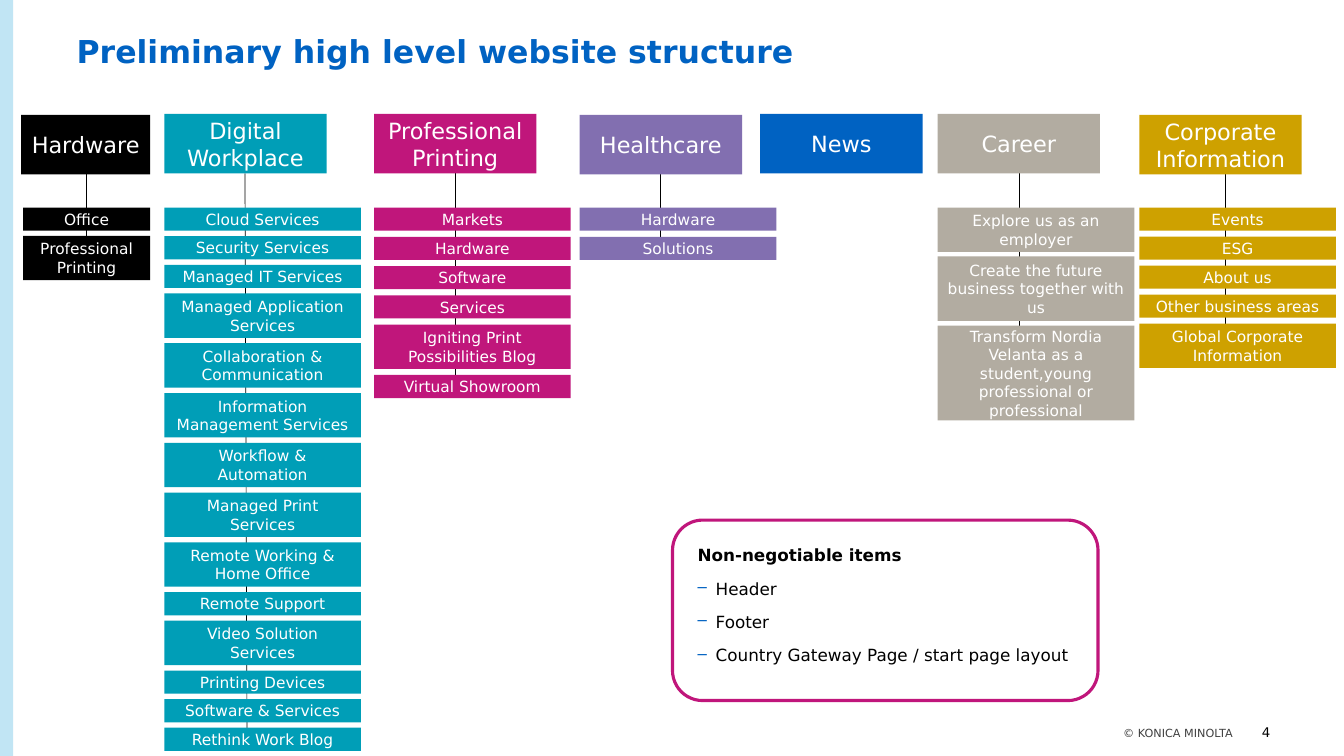
from pptx import Presentation
from pptx.dml.color import RGBColor
from pptx.enum.shapes import MSO_CONNECTOR, MSO_SHAPE
from pptx.enum.text import MSO_ANCHOR, PP_ALIGN
from pptx.oxml.ns import qn
from pptx.util import Pt
from lxml import etree

PX = 9144  # EMU per px, 100 px to the inch
FONT = "DejaVu Sans"

BLACK = RGBColor(0x00, 0x00, 0x00)
WHITE = RGBColor(0xFF, 0xFF, 0xFF)
GREY = RGBColor(0x40, 0x40, 0x40)
PALE_BLUE = RGBColor(0xC1, 0xE5, 0xF4)
BLUE = RGBColor(0x00, 0x62, 0xC2)
TEAL = RGBColor(0x00, 0x9E, 0xB7)
PINK = RGBColor(0xC0, 0x16, 0x7B)
PURPLE = RGBColor(0x82, 0x6F, 0xB0)
STONE = RGBColor(0xB2, 0xAC, 0xA1)
GOLD = RGBColor(0xCE, 0xA1, 0x00)

LEFT, CENTER, RIGHT = PP_ALIGN.LEFT, PP_ALIGN.CENTER, PP_ALIGN.RIGHT
TOP, MIDDLE, BOTTOM = MSO_ANCHOR.TOP, MSO_ANCHOR.MIDDLE, MSO_ANCHOR.BOTTOM
RECT, ROUND_RECT = MSO_SHAPE.RECTANGLE, MSO_SHAPE.ROUNDED_RECTANGLE
STRAIGHT = MSO_CONNECTOR.STRAIGHT

HEAD_HEIGHT = 59
LIST_TOP = 206
ITEM_HEIGHT = {1: 23, 2: 44, 3: 64, 5: 94}  # by number of text lines

# name, colour, head (left, top, width), list (left, width, bottom),
# stem (x at top, x at bottom, end y), items as (text, lines)
COLUMNS = [
    ("Hardware", BLACK, (21, 114, 128), (23, 126, 278), (86, 86, 250), [
        ("Office", 1), ("Professional Printing", 2)]),
    ("Digital Workplace", TEAL, (163, 113, 161), (163, 195, 745), (243, 245, 734), [
        ("Cloud Services", 1), ("Security Services", 1),
        ("Managed IT Services", 1), ("Managed Application Services", 2),
        ("Collaboration & Communication", 2),
        ("Information Management Services", 2),
        ("Workflow & Automation", 2), ("Managed Print Services", 2),
        ("Remote Working & Home Office", 2), ("Remote Support", 1),
        ("Video Solution Services", 2), ("Printing Devices", 1),
        ("Software & Services", 1), ("Rethink Work Blog", 1)]),
    ("Professional Printing", PINK, (371, 113, 161), (371, 195, 395), (452, 452, 384), [
        ("Markets", 1), ("Hardware", 1), ("Software", 1), ("Services", 1),
        ("Igniting Print Possibilities Blog", 2), ("Virtual Showroom", 1)]),
    ("Healthcare", PURPLE, (575, 114, 161), (575, 195, 258), (655, 655, 244), [
        ("Hardware", 1), ("Solutions", 1)]),
    ("News", BLUE, (754, 113, 161), None, None, []),
    ("Career", STONE, (930, 113, 161), (930, 195, 417), (1011, 1011, 370), [
        ("Explore us as an employer", 2),
        ("Create the future business together with us", 3),
        ("Transform Nordia Velanta as a student,young professional or professional", 5)]),
    ("Corporate Information", GOLD, (1130, 114, 161), (1130, 195, 365), (1215, 1215, 341), [
        ("Events", 1), ("ESG", 1), ("About us", 1),
        ("Other business areas", 1), ("Global Corporate Information", 2)]),
]


class Deck:
    def __init__(self, width, height):
        self.prs = Presentation()
        self.prs.slide_width, self.prs.slide_height = width * PX, height * PX
        self.s = self.prs.slides.add_slide(self.prs.slide_layouts[6])

    def style(self, p, size, color, bold=False):
        for r in p.runs:
            r.font.name, r.font.size, r.font.bold = FONT, Pt(size), bold
            r.font.color.rgb = color

    def shape(self, kind, x, y, w, h, fill=None, line=None, weight=1):
        sp = self.s.shapes.add_shape(kind, *(round(v * PX) for v in (x, y, w, h)))
        sp.shadow.inherit = False
        if fill is None:
            sp.fill.background()
        else:
            sp.fill.solid()
            sp.fill.fore_color.rgb = fill
        if line is None:
            sp.line.fill.background()
        else:
            sp.line.color.rgb = line
            sp.line.width = Pt(weight)
        return sp

    def box(self, text, x, y, w, h, fill, size):
        tf = self.shape(RECT, x, y, w, h, fill).text_frame
        tf.word_wrap = True
        tf.vertical_anchor = MIDDLE
        tf.text = text
        tf.paragraphs[0].alignment = CENTER
        self.style(tf.paragraphs[0], size, WHITE)

    def line(self, x1, y1, x2, y2):
        c = self.s.shapes.add_connector(STRAIGHT, x1 * PX, y1 * PX, x2 * PX, y2 * PX)
        c.line.color.rgb = BLACK
        c.line.width = Pt(0.5)
        etree.SubElement(c.element.spPr, qn("a:effectLst"))

    def frame(self, x, y, w, h):
        tf = self.s.shapes.add_textbox(x * PX, y * PX, w * PX, h * PX).text_frame
        tf.word_wrap = True
        return tf

    def label(self, text, x, y, w, h, size, color, align=LEFT, anchor=TOP,
              bold=False, spacing=1.0):
        tf = self.frame(x, y, w, h)
        tf.margin_left = tf.margin_right = tf.margin_top = tf.margin_bottom = 0
        tf.vertical_anchor = anchor
        tf.text = text
        p = tf.paragraphs[0]
        p.alignment, p.line_spacing = align, spacing
        self.style(p, size, color, bold)

    def dash(self, p, color):
        pPr = p._p.get_or_add_pPr()
        pPr.set("marL", str(18 * PX))
        pPr.set("indent", str(-18 * PX))
        clr = etree.SubElement(pPr, qn("a:buClr"))
        etree.SubElement(clr, qn("a:srgbClr")).set("val", str(color))
        etree.SubElement(pPr, qn("a:buChar")).set("char", "–")

    def dash_list(self, heading, items, x, y, w, h, size):
        tf = self.frame(x, y, w, h)
        tf.text = "\n".join([heading] + items)
        for i, p in enumerate(tf.paragraphs):
            p.line_spacing = 1.1
            if i:
                p.space_before = Pt(8)
                self.dash(p, BLUE)
            self.style(p, size, BLACK, bold=i == 0)

    def column(self, name, color, head, stack, stem, items):
        x, y, w = head
        if stem:
            self.line(stem[0], y + HEAD_HEIGHT, stem[1], stem[2])
        self.box(name, x, y, w, HEAD_HEIGHT, color, 16)
        if not items:
            return
        x, w, bottom = stack
        heights = [ITEM_HEIGHT[lines] for _, lines in items]
        gap = (bottom - LIST_TOP - sum(heights)) / (len(items) - 1)
        y = LIST_TOP
        for (text, _), h in zip(items, heights):
            self.box(text, x, y, w, h, color, 11)
            y += h + gap


def main():
    deck = Deck(1333, 750)

    # Side band, title and footer
    deck.shape(RECT, 0, 0, 13, 750, PALE_BLUE)
    deck.label("Preliminary high level website structure", 76, 36, 1061, 35,
               22.5, BLUE, bold=True, spacing=0.9)
    deck.label("4", 1223, 718, 37, 16, 9.5, BLACK, RIGHT, BOTTOM)
    deck.label("© KONICA MINOLTA", 711, 721, 512, 13, 8, GREY, RIGHT, BOTTOM)

    # Site sections with their pages
    for column in COLUMNS:
        deck.column(*column)

    # Fixed items
    deck.dash_list("Non-negotiable items",
                   ["Header", "Footer", "Country Gateway Page / start page layout"],
                   682, 534, 575, 156, 12)
    deck.shape(ROUND_RECT, 667, 516, 422, 179, line=PINK, weight=2.25)

    deck.prs.save("out.pptx")


if __name__ == "__main__":
    main()
